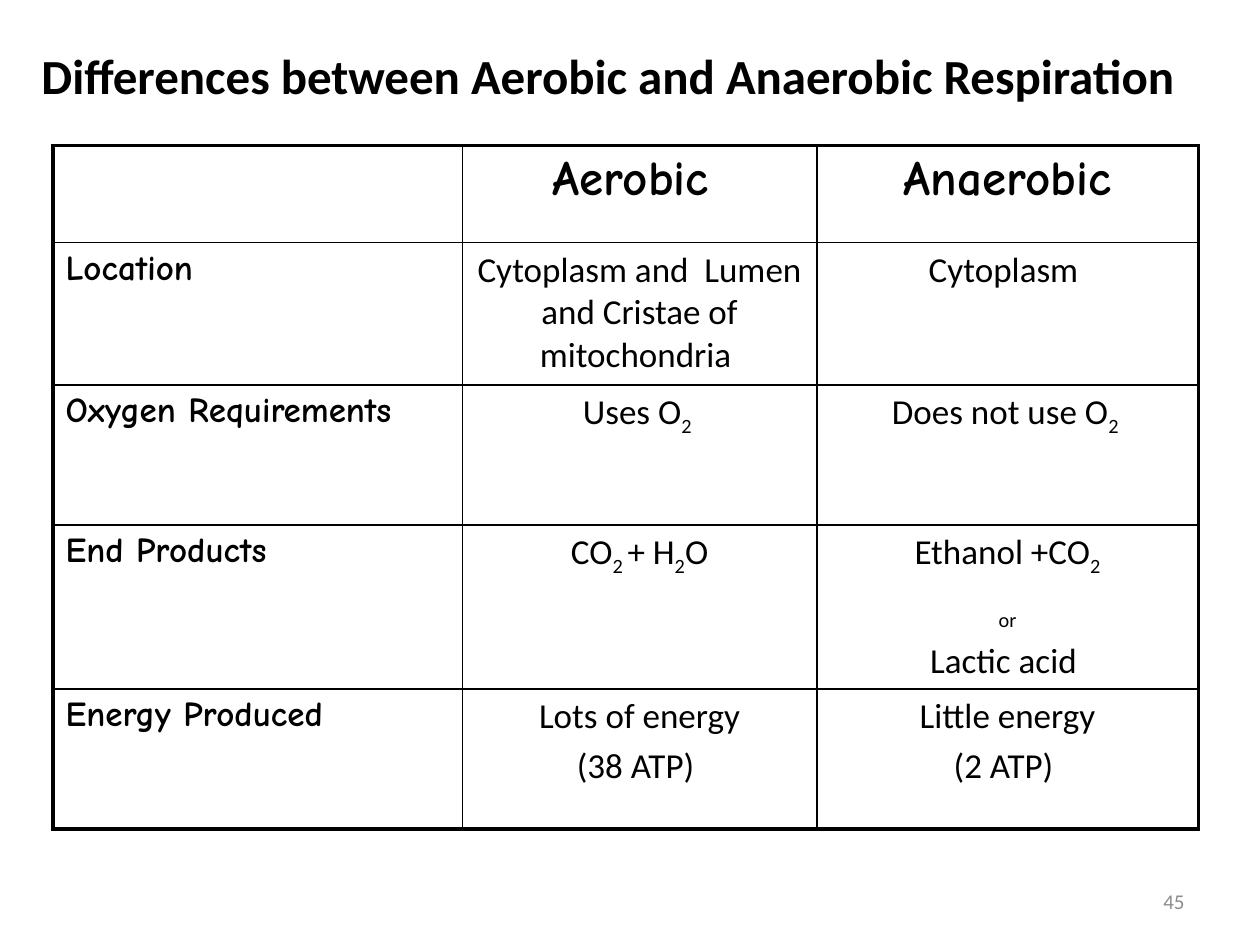
"""Build the slide comparing aerobic and anaerobic respiration."""
from dataclasses import dataclass

from lxml import etree
from pptx import Presentation
from pptx.dml.color import RGBColor
from pptx.enum.text import MSO_ANCHOR, MSO_AUTO_SIZE, PP_ALIGN
from pptx.oxml.ns import qn
from pptx.util import Pt

BLACK = RGBColor(0x00, 0x00, 0x00)
GRAY = RGBColor(0x8C, 0x8C, 0x8C)
LEFT, CENTER, RIGHT = PP_ALIGN.LEFT, PP_ALIGN.CENTER, PP_ALIGN.RIGHT
TOP, MIDDLE = MSO_ANCHOR.TOP, MSO_ANCHOR.MIDDLE
GROW = MSO_AUTO_SIZE.SHAPE_TO_FIT_TEXT
TITLE_ONLY = 5
COLUMN_WIDTHS = (234, 202.5, 218)
ROW_HEIGHTS = (55.5, 81.5, 80, 90, 80)
THICK, THIN = 2.25, 1


@dataclass(frozen=True)
class Style:
    font: str
    size: float
    bold: bool = False
    align: int = LEFT
    color: RGBColor = BLACK
    space_before: float = 0


@dataclass(frozen=True)
class Span:
    text: str
    subscript: bool = False


Lines = tuple[tuple[Span, ...], ...]

TITLE = Style("Calibri", 28, bold=True, space_before=14)
HEADING = Style("Comic Neue", 28, bold=True, align=CENTER, space_before=5.6)
LABEL = Style("Comic Neue", 20, bold=True, space_before=4)
BODY = Style("Calibri", 20, align=CENTER, space_before=4)
NUMBER = Style("Calibri", 12, align=RIGHT, color=GRAY)


def plain(*texts: str) -> Lines:
    """Make one paragraph of ordinary text per string."""
    return tuple((Span(text),) for text in texts)


ROWS: tuple[tuple[Lines, ...], ...] = (
    ((), plain("Aerobic "), plain("Anaerobic")),
    (
        plain("Location"),
        plain("Cytoplasm and  Lumen and Cristae of mitochondria "),
        plain("Cytoplasm "),
    ),
    (
        plain("Oxygen Requirements"),
        ((Span("Uses O"), Span("2 ", True)),),
        ((Span("Does not use O"), Span("2 ", True)),),
    ),
    (
        plain("End Products"),
        ((Span("CO"), Span("2 ", True), Span("+ H"), Span("2", True), Span("O")),),
        (
            (Span("Ethanol +CO"), Span("2", True)),
            (Span("or", True),),
            (Span("Lactic acid "),),
        ),
    ),
    (
        plain("Energy Produced"),
        plain("Lots of energy", "(38 ATP) "),
        plain("Little energy", "(2 ATP) "),
    ),
)


def write(frame, lines: Lines, style: Style) -> None:
    """Write styled paragraphs into a text frame, run by run."""
    for index, spans in enumerate(lines):
        paragraph = frame.add_paragraph() if index else frame.paragraphs[0]
        paragraph.alignment = style.align
        paragraph.space_before = Pt(style.space_before)
        for span in spans:
            run = paragraph.add_run()
            run.text = span.text
            run.font.name = style.font
            run.font.size = Pt(style.size)
            run.font.bold = style.bold
            run.font.color.rgb = style.color
            if span.subscript:
                run.font._element.set("baseline", "-25000")


def place(box, left: float, top: float, width: float, height: float) -> None:
    """Move and size a box in points."""
    box.left, box.top = Pt(left), Pt(top)
    box.width, box.height = Pt(width), Pt(height)


def set_borders(cell, widths: dict[str, float]) -> None:
    """Draw the cell's sides with the given line widths."""
    properties = cell._tc.get_or_add_tcPr()
    for index, (side, width) in enumerate(widths.items()):
        line = etree.Element(qn(f"a:ln{side}"), w=str(Pt(width)))
        fill = etree.SubElement(line, qn("a:solidFill"))
        etree.SubElement(fill, qn("a:srgbClr"), val=str(BLACK))
        properties.insert(index, line)


def add_comparison(page) -> None:
    """Add the table with a thick frame and thin inner lines."""
    row_count, column_count = len(ROW_HEIGHTS), len(COLUMN_WIDTHS)
    table = page.shapes.add_table(
        row_count, column_count, Pt(30.25), Pt(83),
        Pt(sum(COLUMN_WIDTHS)), Pt(sum(ROW_HEIGHTS)),
    ).table
    table.first_row = table.horz_banding = False
    for column, width in zip(table.columns, COLUMN_WIDTHS):
        column.width = Pt(width)
    for row, height in zip(table.rows, ROW_HEIGHTS):
        row.height = Pt(height)
    for i, contents in enumerate(ROWS):
        for j, lines in enumerate(contents):
            cell = table.cell(i, j)
            cell.fill.background()
            style = HEADING if i == 0 else LABEL if j == 0 else BODY
            write(cell.text_frame, lines, style)
            set_borders(cell, {
                "L": THICK if j == 0 else THIN,
                "R": THICK if j == column_count - 1 else THIN,
                "T": THICK if i == 0 else THIN,
                "B": THICK if i == row_count - 1 else THIN,
            })


def main() -> None:
    """Create and save the deck."""
    deck = Presentation()
    deck.slide_width, deck.slide_height = Pt(720), Pt(540)
    page = deck.slides.add_slide(deck.slide_layouts[TITLE_ONLY])
    add_comparison(page)

    title = page.shapes.title
    place(title, 16.5, 22.5, 667.5, 41)
    title.text_frame.vertical_anchor = TOP
    title.text_frame.auto_size = GROW
    write(title.text_frame,
          plain("Differences between Aerobic and Anaerobic Respiration"), TITLE)

    number = page.shapes.add_textbox(Pt(516), Pt(500.5), Pt(168), Pt(28.75))
    number.text_frame.word_wrap = True
    number.text_frame.vertical_anchor = MIDDLE
    write(number.text_frame, plain("45"), NUMBER)
    deck.save("out.pptx")


if __name__ == "__main__":
    main()
